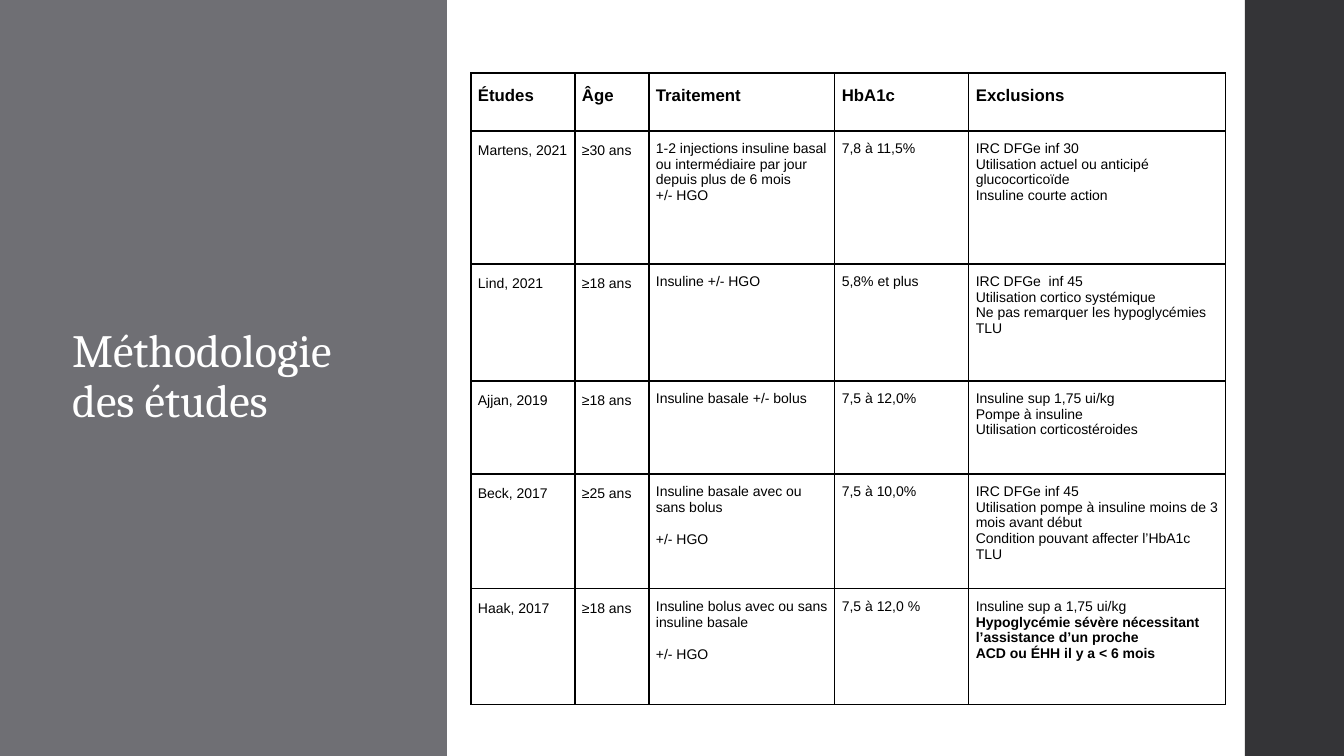
from pptx import Presentation
from pptx.dml.color import RGBColor
from pptx.enum.shapes import MSO_SHAPE
from pptx.enum.text import MSO_ANCHOR, PP_ALIGN
from pptx.oxml import parse_xml
from pptx.oxml.ns import nsdecls
from pptx.util import Emu, Pt

SCALE = 914400 / 100.8  # EMU per px
COLORS = {"panel": "6F6F74", "band": "343437", "white": "FFFFFF", "black": "000000"}


def px(value):
    return Emu(round(value * SCALE))


def add_run(paragraph, text, font_name, size, color, bold=False):
    run = paragraph.add_run()
    run.text = text
    run.font.name = font_name
    run.font.size = Pt(size)
    run.font.bold = bold
    run.font.color.rgb = RGBColor.from_string(COLORS[color])


presentation = Presentation()
presentation.slide_width = px(1344)
presentation.slide_height = px(756)
slide = presentation.slides.add_slide(presentation.slide_layouts[5])

# Title
title = slide.shapes.title
title.left, title.top, title.width, title.height = px(62), px(92), px(349), px(571)
title_frame = title.text_frame
title_frame.word_wrap = True
title_frame.vertical_anchor = MSO_ANCHOR.MIDDLE
paragraph = title_frame.paragraphs[0]
paragraph.alignment = PP_ALIGN.LEFT
paragraph.line_spacing = 0.9
add_run(paragraph, "Méthodologie des études", "Cambria", 33, "white")

# Side panels, behind the title
for left, width, color in [(0, 447, "panel"), (1245, 99, "band")]:
    panel = slide.shapes.add_shape(MSO_SHAPE.RECTANGLE, px(left), 0, px(width), px(756))
    panel.shadow.inherit = False
    panel.fill.solid()
    panel.fill.fore_color.rgb = RGBColor.from_string(COLORS[color])
    panel.line.fill.background()
    title.element.addprevious(panel.element)

# Studies: "\n" starts a paragraph, "|" a spaced paragraph, "**" toggles bold
studies = [
    ["**Études**", "**Âge**", "**Traitement**", "**HbA1c**", "**Exclusions**"],
    ["Martens, 2021", "≥30 ans",
     "1-2 injections insuline basal ou intermédiaire par jour depuis plus de 6 mois\n+/- HGO",
     "7,8 à 11,5%",
     "IRC DFGe inf 30\nUtilisation actuel ou anticipé glucocorticoïde\nInsuline courte action"],
    ["Lind, 2021", "≥18 ans", "Insuline +/- HGO", "5,8% et plus",
     "IRC DFGe  inf 45\nUtilisation cortico systémique\n"
     "Ne pas remarquer les hypoglycémies\nTLU"],
    ["Ajjan, 2019", "≥18 ans", "Insuline basale +/- bolus", "7,5 à 12,0%",
     "Insuline sup 1,75 ui/kg\nPompe à insuline\nUtilisation corticostéroides"],
    ["Beck, 2017", "≥25 ans", "Insuline basale avec ou sans bolus|+/- HGO", "7,5 à 10,0%",
     "IRC DFGe inf 45\nUtilisation pompe à insuline moins de 3 mois avant début\n"
     "Condition pouvant affecter l’HbA1c\nTLU"],
    ["Haak, 2017", "≥18 ans", "Insuline bolus avec ou sans insuline basale|+/- HGO",
     "7,5 à 12,0 %",
     "Insuline sup a 1,75 ui/kg **Hypoglycémie sévère nécessitant l’assistance d’un proche**\n"
     "**ACD ou ÉHH il y a < 6 mois**"],
]
column_widths = [104, 74, 186, 134, 257]
row_heights = [58, 133, 117, 93, 115, 116]

# Table
table = slide.shapes.add_table(
    len(row_heights), len(column_widths), px(471), px(73),
    px(sum(column_widths)), px(sum(row_heights))).table
table.first_row = False
table.horz_banding = False
for column, width in zip(table.columns, column_widths):
    column.width = px(width)
for row, height in zip(table.rows, row_heights):
    row.height = px(height)

for row_index, study in enumerate(studies):
    for column_index, content in enumerate(study):
        cell = table.cell(row_index, column_index)
        cell.margin_left = cell.margin_right = px(7)
        cell.margin_top = cell.margin_bottom = px(10)
        cell.vertical_anchor = MSO_ANCHOR.TOP

        # Borders come before the fill in the cell properties
        properties = cell._tc.get_or_add_tcPr()
        for side in ("lnL", "lnR", "lnT", "lnB"):
            properties.append(parse_xml(
                f'<a:{side} {nsdecls("a")} w="{Pt(1)}"><a:solidFill>'
                f'<a:srgbClr val="{COLORS["black"]}"/></a:solidFill></a:{side}>'))
        cell.fill.background()

        # Text
        frame = cell.text_frame
        frame.word_wrap = True
        blocks = [(line, line_index == 0) for block in content.split("|")
                  for line_index, line in enumerate(block.split("\n"))]
        for index, (line, spaced) in enumerate(blocks):
            paragraph = frame.add_paragraph() if index else frame.paragraphs[0]
            paragraph.space_before = Pt(12 if spaced else 0)
            paragraph.line_spacing = 1.15 if row_index == 0 or column_index < 2 else 1.0
            for part_index, part in enumerate(line.split("**")):
                if part:
                    add_run(paragraph, part, "Arial", 10 if row_index else 12, "black",
                            bold=part_index % 2 == 1)

presentation.save("out.pptx")
